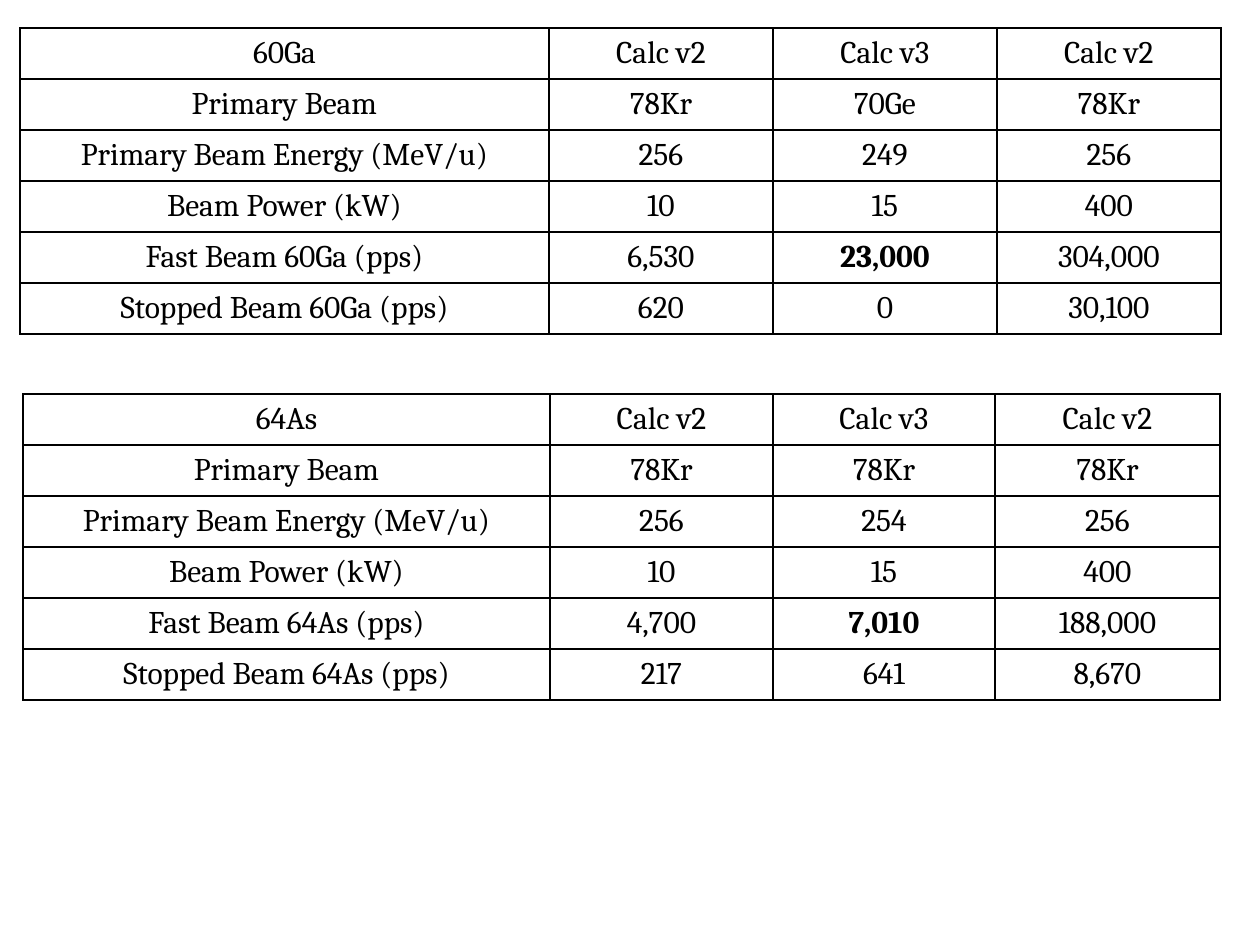
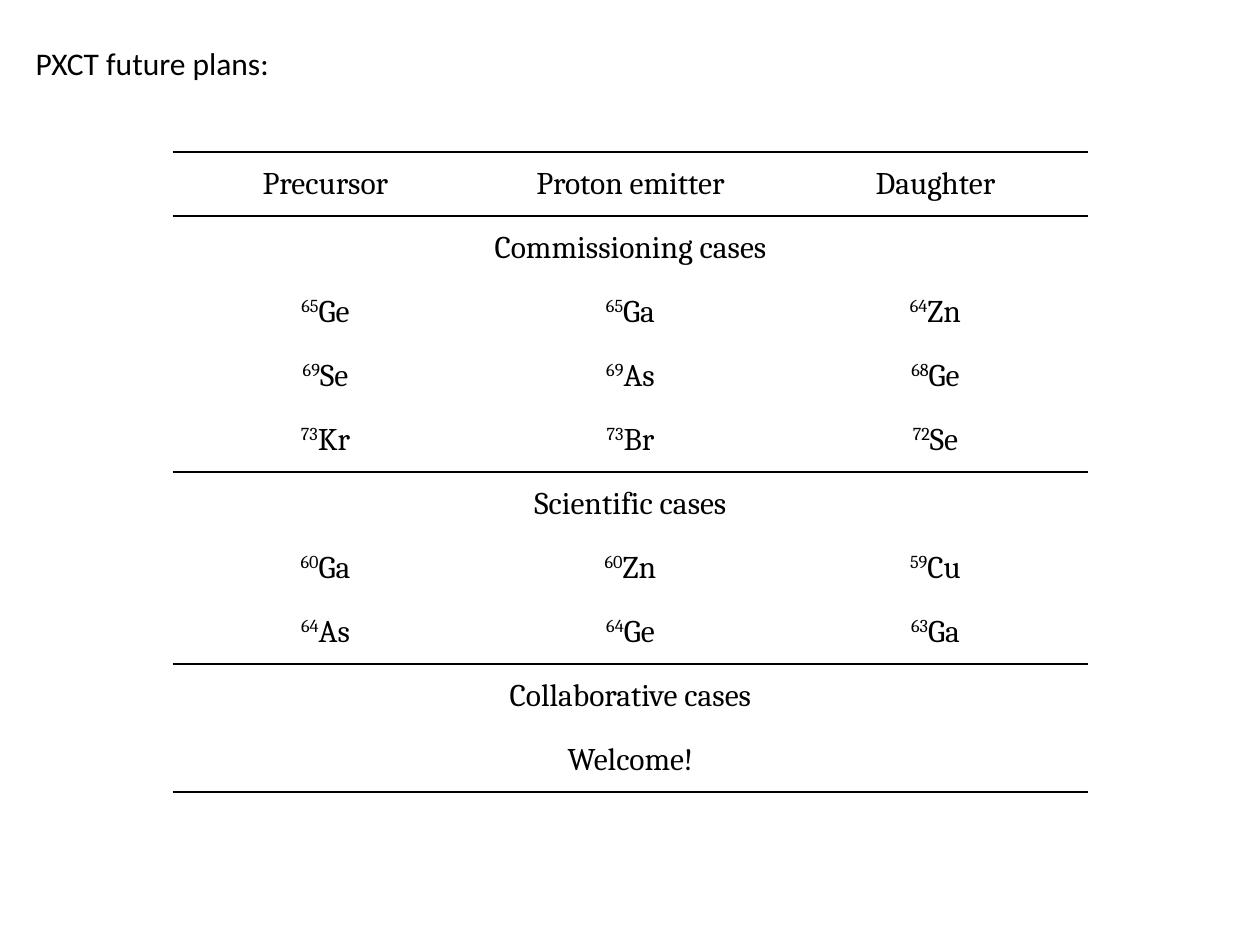
from dataclasses import dataclass

from lxml import etree
from pptx import Presentation
from pptx.dml.color import RGBColor
from pptx.enum.text import MSO_ANCHOR, PP_ALIGN
from pptx.oxml.ns import qn
from pptx.util import Emu, Pt

# Shared style
EMU_PER_PX = 914400 / 126
INK = "000000"
TABLE_FONT, TITLE_FONT = "Cambria", "Calibri"
TEXT_SIZE = 18
RULE_WIDTH = 1
SIDES = "LRTB"
CENTER, LEFT = PP_ALIGN.CENTER, PP_ALIGN.LEFT
MIDDLE, TOP = MSO_ANCHOR.MIDDLE, MSO_ANCHOR.TOP
TITLE_ONLY, BLANK = 5, 6


@dataclass
class Grid:
    left: int
    top: int
    columns: list[int]
    row_height: int
    rows: list[list[str]]  # a row with a single text spans all columns
    bold: tuple[tuple[int, int], ...] = ()
    ruled_after: tuple[int, ...] | None = None  # None draws every border


def px(length: int) -> Emu:
    return Emu(round(length * EMU_PER_PX))


def color(value: str) -> RGBColor:
    return RGBColor.from_string(value)


def write(frame, text: str, *, font: str = TABLE_FONT, align=CENTER,
          bold: bool = False) -> None:
    """Write one paragraph; a part before "|" is raised as a mass number."""
    raised, _, base = text.rpartition("|")
    paragraph = frame.paragraphs[0]
    paragraph.alignment = align
    for part, is_raised in ((raised, True), (base, False)):
        if not part:
            continue
        run = paragraph.add_run()
        run.text = part
        run.font.name = font
        run.font.size = Pt(TEXT_SIZE)
        run.font.bold = bold
        run.font.color.rgb = color(INK)
        if is_raised:
            run._r.get_or_add_rPr().set("baseline", "30000")


def set_borders(cell, ruled: str) -> None:
    properties = cell._tc.get_or_add_tcPr()
    for side in SIDES:
        line = etree.SubElement(properties, qn(f"a:ln{side}"),
                                w=str(Pt(RULE_WIDTH)))
        if side in ruled:
            fill = etree.SubElement(line, qn("a:solidFill"))
            etree.SubElement(fill, qn("a:srgbClr"), val=INK)
        else:
            etree.SubElement(line, qn("a:noFill"))


def ruled_sides(grid: Grid, row: int) -> str:
    if grid.ruled_after is None:
        return SIDES
    above = "T" if row - 1 in grid.ruled_after else ""
    below = "B" if row in grid.ruled_after else ""
    return above + below


def draw_grid(slide, grid: Grid) -> None:
    row_count, column_count = len(grid.rows), len(grid.columns)
    table = slide.shapes.add_table(
        row_count, column_count, px(grid.left), px(grid.top),
        px(sum(grid.columns)), px(grid.row_height * row_count)).table
    table.first_row = table.horz_banding = False
    for column, width in zip(table.columns, grid.columns):
        column.width = px(width)
    for r, texts in enumerate(grid.rows):
        table.rows[r].height = px(grid.row_height)
        for c in range(column_count):
            cell = table.cell(r, c)
            set_borders(cell, ruled_sides(grid, r))
            cell.fill.background()
            cell.vertical_anchor = MIDDLE
            cell.margin_top = cell.margin_bottom = 0
            if c < len(texts):
                write(cell.text_frame, texts[c], bold=(r, c) in grid.bold)
        if len(texts) == 1:
            table.cell(r, 0).merge(table.cell(r, column_count - 1))


def draw_title(slide, text: str, left: int, top: int,
               width: int, height: int) -> None:
    title = slide.shapes.title
    title.left, title.top = px(left), px(top)
    title.width, title.height = px(width), px(height)
    title.text_frame.word_wrap = False
    title.text_frame.vertical_anchor = TOP
    write(title.text_frame, text, font=TITLE_FONT, align=LEFT)


def beam_rows(nuclide: str, beams: list[str], energies: list[str],
              fast: list[str], stopped: list[str]) -> list[list[str]]:
    return [
        [nuclide, "Calc v2", "Calc v3", "Calc v2"],
        ["Primary Beam", *beams],
        ["Primary Beam Energy (MeV/u)", *energies],
        ["Beam Power (kW)", "10", "15", "400"],
        [f"Fast Beam {nuclide} (pps)", *fast],
        [f"Stopped Beam {nuclide} (pps)", *stopped],
    ]


# Beam rates
BEST_RATE = ((4, 2),)
GALLIUM_RATES = Grid(
    20, 28, [529, 224, 224, 224], 51,
    beam_rows("60Ga", ["78Kr", "70Ge", "78Kr"], ["256", "249", "256"],
              ["6,530", "23,000", "304,000"], ["620", "0", "30,100"]),
    bold=BEST_RATE)
ARSENIC_RATES = Grid(
    23, 394, [527, 223, 222, 225], 51,
    beam_rows("64As", ["78Kr", "78Kr", "78Kr"], ["256", "254", "256"],
              ["4,700", "7,010", "188,000"], ["217", "641", "8,670"]),
    bold=BEST_RATE)

# Decay cases, with rules above the header and after each section
DECAY_CASES = Grid(
    173, 152, [305] * 3, 64,
    [
        ["Precursor", "Proton emitter", "Daughter"],
        ["Commissioning cases"],
        ["65|Ge", "65|Ga", "64|Zn"],
        ["69|Se", "69|As", "68|Ge"],
        ["73|Kr", "73|Br", "72|Se"],
        ["Scientific cases"],
        ["60|Ga", "60|Zn", "59|Cu"],
        ["64|As", "64|Ge", "63|Ga"],
        ["Collaborative cases"],
        ["Welcome!"],
    ],
    ruled_after=(-1, 0, 4, 7, 9))


def main() -> None:
    deck = Presentation()
    deck.slide_width, deck.slide_height = px(1260), px(945)

    rates_slide = deck.slides.add_slide(deck.slide_layouts[BLANK])
    for rates in (GALLIUM_RATES, ARSENIC_RATES):
        draw_grid(rates_slide, rates)

    plans_slide = deck.slides.add_slide(deck.slide_layouts[TITLE_ONLY])
    draw_grid(plans_slide, DECAY_CASES)
    draw_title(plans_slide, "PXCT future plans:", 23, 38, 262, 50)

    deck.save("out.pptx")


if __name__ == "__main__":
    main()
